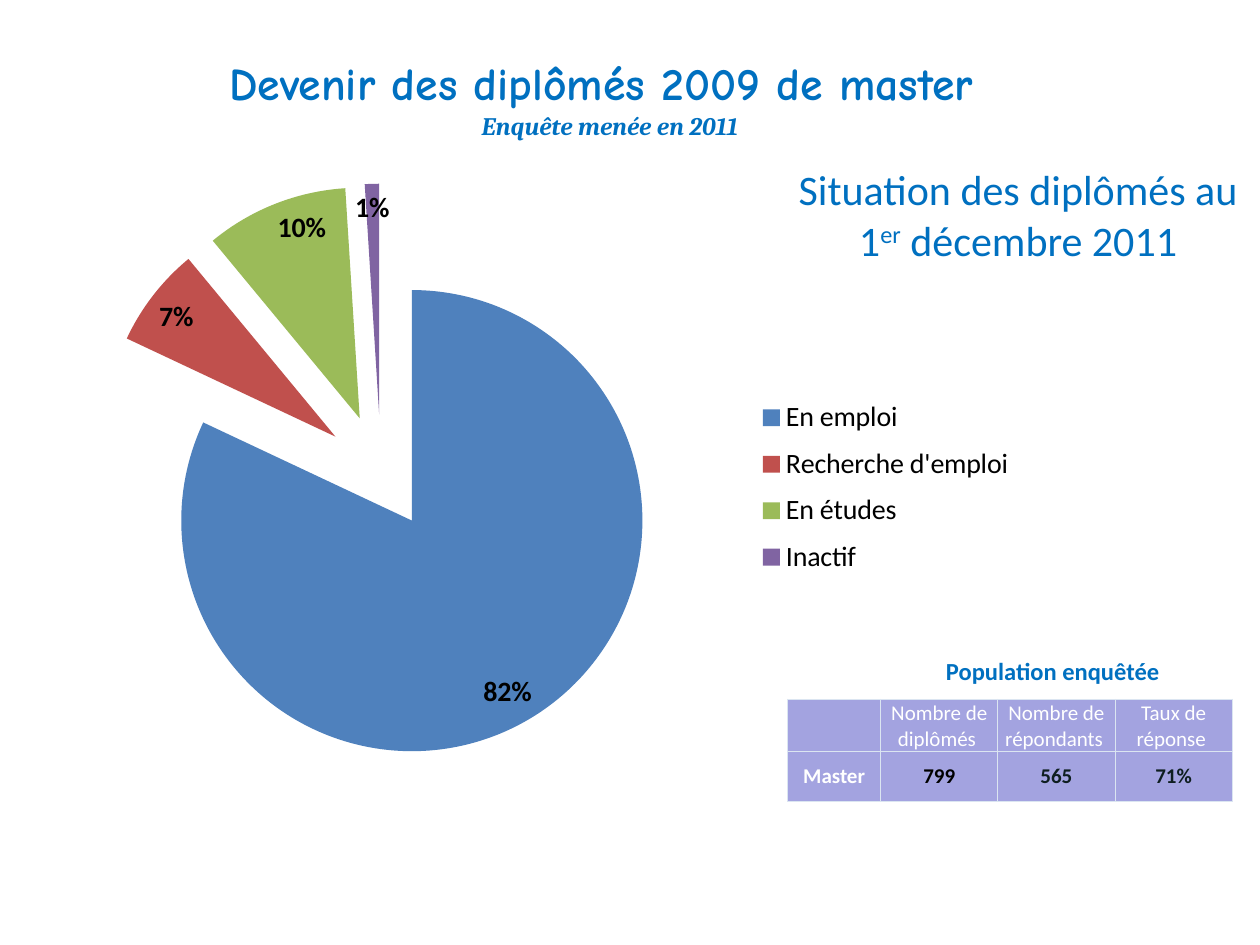
from lxml import etree
from pptx import Presentation
from pptx.chart.data import CategoryChartData
from pptx.dml.color import RGBColor
from pptx.enum import chart as ch, text as tx
from pptx.oxml import ns, parse_xml
from pptx.util import Inches, Pt

BLUE = RGBColor(0x00, 0x70, 0xC0)
LILAC = RGBColor(0xA3, 0xA3, 0xE0)
WHITE = RGBColor(0xFF, 0xFF, 0xFF)
BLACK = RGBColor(0x00, 0x00, 0x00)
DARK = RGBColor(0x0E, 0x1E, 0x20)
EDGE = "DBE5F1"

TITLE = [("Devenir des diplômés 2009 de master ", 26.1, "Comic Neue", False),
         ("Enquête menée en 2011", 14.4, "Cambria", True)]
STATUS = [("En emploi", 82, RGBColor(0x4F, 0x81, 0xBD)),
          ("Recherche d'emploi", 7, RGBColor(0xC0, 0x50, 0x4D)),
          ("En études", 10, RGBColor(0x9B, 0xBB, 0x59)),
          ("Inactif", 1, RGBColor(0x80, 0x64, 0xA2))]
SURVEY = [["", "Nombre de diplômés ", "Nombre de répondants ", "Taux de réponse "],
          ["Master", "799", "565", "71%"]]
INKS = [WHITE, BLACK, DARK, DARK]
WIDTHS = [0.74, 0.93, 0.93, 0.93]
HEIGHTS = [0.41, 0.4]


def style(font, size, color, bold=False, name="Calibri"):
    font.size, font.bold, font.name = Pt(size), bold, name
    font.color.rgb = color


def add_text(slide, box, parts, size, bold=False):
    frame = slide.shapes.add_textbox(*map(Inches, box)).text_frame
    frame.word_wrap = True
    para = frame.paragraphs[0]
    para.alignment = tx.PP_ALIGN.CENTER
    for part in parts:
        run = para.add_run()
        run.text = part
        style(run.font, size, BLUE, bold)
    return para


def set_layout(parent, index, box, inner=False):
    """Place a chart part by fractions of the chart's size."""
    for old in parent.findall(ns.qn("c:layout")):
        parent.remove(old)
    target = '<c:layoutTarget val="inner"/>' if inner else ""
    modes = "".join(f'<c:{a}Mode val="edge"/>' for a in "xy")
    sizes = "".join(f'<c:{a} val="{v}"/>' for a, v in zip("xywh", box))
    parent.insert(index, parse_xml(
        f'<c:layout {ns.nsdecls("c")}><c:manualLayout>{target}{modes}{sizes}'
        '</c:manualLayout></c:layout>'))


def add_edges(cell):
    props = cell._tc.get_or_add_tcPr()
    for side in "LRTB":
        props.append(parse_xml(
            f'<a:ln{side} {ns.nsdecls("a")} w="{Pt(0.5)}"><a:solidFill>'
            f'<a:srgbClr val="{EDGE}"/></a:solidFill></a:ln{side}>'))


def add_title(slide):
    title = slide.shapes.title
    title.left, title.top, title.width, title.height = map(
        Inches, (0.35, 0.39, 8.98, 1.12))
    frame = title.text_frame
    frame.vertical_anchor = tx.MSO_ANCHOR.MIDDLE
    frame.margin_bottom = Inches(0.4)
    para = frame.paragraphs[0]
    para.alignment = tx.PP_ALIGN.CENTER
    for i, (words, size, name, slant) in enumerate(TITLE):
        if i:
            para.add_line_break()
        run = para.add_run()
        run.text = words
        style(run.font, size, BLUE, True, name)
        run.font.italic = slant


def add_survey(slide):
    table = slide.shapes.add_table(
        len(HEIGHTS), len(WIDTHS), Inches(6.25), Inches(5.55),
        Inches(sum(WIDTHS)), Inches(sum(HEIGHTS))).table
    for col, width in zip(table.columns, WIDTHS):
        col.width = Inches(width)
    for r, words in enumerate(SURVEY):
        table.rows[r].height = Inches(HEIGHTS[r])
        for c, word in enumerate(words):
            cell = table.cell(r, c)
            add_edges(cell)
            cell.fill.solid()
            cell.fill.fore_color.rgb = LILAC
            cell.vertical_anchor = tx.MSO_ANCHOR.MIDDLE
            cell.margin_left = cell.margin_right = cell.margin_top = Inches(0.01)
            cell.margin_bottom = 0
            cell.text = word
            para = cell.text_frame.paragraphs[0]
            para.alignment = tx.PP_ALIGN.CENTER
            style(para.font, 12, INKS[c] if r else WHITE, r > 0)
            for run in para.runs:
                style(run.font, 12, INKS[c] if r else WHITE, r > 0)


def add_pie(slide):
    data = CategoryChartData()
    data.categories = [name for name, _, _ in STATUS]
    data.add_series("Series 1", [value for _, value, _ in STATUS])
    chart = slide.shapes.add_chart(
        ch.XL_CHART_TYPE.PIE, *map(Inches, (0, 1.41, 8.52, 4.92)), data).chart
    chart.has_title = False
    style(chart.font, 10, BLACK)
    plot = chart.plots[0]
    plot.vary_by_categories = True
    series = plot.series[0]
    series.format.line.fill.background()
    burst = etree.Element(ns.qn("c:explosion"), val="25")
    series._element.find(ns.qn("c:spPr")).addnext(burst)
    for i, (_, _, color) in enumerate(STATUS):
        fill = series.points[i].format.fill
        fill.solid()
        fill.fore_color.rgb = color
    plot.has_data_labels = True
    labels = plot.data_labels
    labels.show_percentage, labels.show_value = True, False
    labels.number_format, labels.number_format_is_linked = "0%", False
    labels.position = ch.XL_LABEL_POSITION.INSIDE_END
    style(labels.font, 16, BLACK, True)
    chart.has_legend = True
    legend = chart.legend
    legend.position = ch.XL_LEGEND_POSITION.RIGHT
    legend.include_in_layout = False
    style(legend.font, 16, BLACK)
    set_layout(legend._element, 1, (0.7, 0.34, 0.25, 0.32))
    area = plot._element.getparent()
    set_layout(area, 0, (0.01, 0.01, 0.69, 0.93), inner=True)


def main():
    deck = Presentation()
    deck.slide_width, deck.slide_height = Inches(10), Inches(7.5)
    slide = deck.slides.add_slide(deck.slide_layouts[5])
    add_title(slide)
    add_text(slide, (6.95, 5.16, 2.81, 0.34), ["Population enquêtée"], 14, True)
    para = add_text(slide, (6.09, 1.25, 3.98, 0.91),
                    ["Situation des diplômés au 1", "er", " décembre 2011"], 24)
    para.runs[1].font._element.set("baseline", "30000")
    add_survey(slide)
    add_pie(slide)
    deck.save("out.pptx")


if __name__ == "__main__":
    main()
